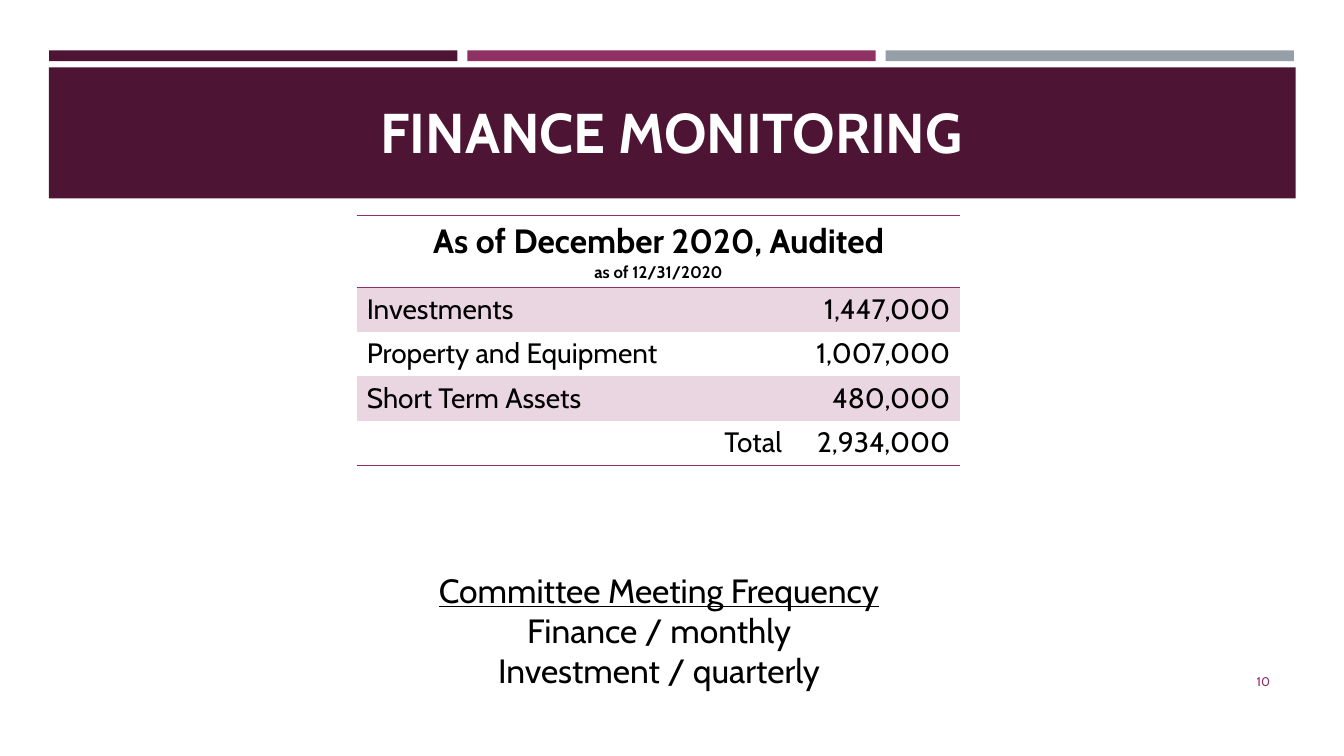
from dataclasses import dataclass

from lxml import etree
from pptx import Presentation
from pptx.dml.color import RGBColor
from pptx.enum.shapes import MSO_SHAPE
from pptx.enum.text import MSO_ANCHOR, PP_ALIGN
from pptx.oxml.ns import qn
from pptx.util import Cm, Pt

RECT = MSO_SHAPE.RECTANGLE
MIDDLE = MSO_ANCHOR.MIDDLE
LEFT, CENTER, RIGHT = PP_ALIGN.LEFT, PP_ALIGN.CENTER, PP_ALIGN.RIGHT
PLAIN_TABLE = "{2D5ABB26-0587-4C30-8999-92F81FD0307C}"


@dataclass(frozen=True)
class Theme:
    font: str = "Cabin"
    plum: str = "4D1434"
    magenta: str = "903163"
    gray: str = "969FA7"
    band: str = "E9D6E0"
    white: str = "FFFFFF"
    black: str = "000000"
    title: int = 40
    heading: int = 24
    body: int = 20
    note: int = 12
    number: int = 9


theme = Theme()


def style(p, size, color=theme.black, align=LEFT, bold=False):
    p.alignment = align
    for r in p.runs:
        r.font.name = theme.font
        r.font.size = Pt(size)
        r.font.bold = bold
        r.font.color.rgb = RGBColor.from_string(color)


def add_border(cell, side):
    ln = etree.Element(qn(f"a:{side}"), w=str(Pt(1)))
    fill = etree.SubElement(ln, qn("a:solidFill"))
    etree.SubElement(fill, qn("a:srgbClr"), val=theme.magenta)
    tcPr = cell._tc.get_or_add_tcPr()
    tcPr.insert(len(tcPr.findall(qn("a:lnT"))), ln)


prs = Presentation()
prs.slide_width, prs.slide_height = Cm(33.87), Cm(19.05)
s = prs.slides.add_slide(prs.slide_layouts[6])

blocks = [(1.24 + 10.54 * i, 1.27, 10.29, 0.27, color)
          for i, color in enumerate([theme.plum, theme.magenta, theme.gray])]
blocks.append((1.23, 1.7, 31.42, 3.3, theme.plum))
for x, y, w, h, color in blocks:
    sp = s.shapes.add_shape(RECT, Cm(x), Cm(y), Cm(w), Cm(h))
    sp.shadow.inherit = False
    sp.fill.solid()
    sp.fill.fore_color.rgb = RGBColor.from_string(color)
    sp.line.fill.background()

meetings = "Committee Meeting Frequency\nFinance / monthly\nInvestment / quarterly"
texts = [
    ("FINANCE MONITORING", 1.47, 1.57, 30.91, 3.48, theme.title, theme.white, CENTER, True),
    (meetings, 1.14, 14.2, 30.94, 3.35, theme.heading, theme.black, CENTER, False),
    ("10", 29.34, 16.66, 2.92, 1.02, theme.number, theme.magenta, RIGHT, False),
]
for text, x, y, w, h, size, color, align, bold in texts:
    tf = s.shapes.add_textbox(Cm(x), Cm(y), Cm(w), Cm(h)).text_frame
    tf.word_wrap = True
    tf.vertical_anchor = MIDDLE
    tf.text = text
    for p in tf.paragraphs:
        style(p, size, color, align, bold)
    if text == meetings:
        tf.paragraphs[0].runs[0].font.underline = True

rows = [
    ("Investments", "1,447,000"),
    ("Property and Equipment", "1,007,000"),
    ("Short Term Assets", "480,000"),
    ("Total", "2,934,000"),
]
table = s.shapes.add_table(len(rows) + 1, 2, Cm(8.99), Cm(5.44), Cm(15.21), Cm(6.28)).table
table._tbl.tblPr.find(qn("a:tableStyleId")).text = PLAIN_TABLE
table.first_row = table.horz_banding = False
table.columns[0].width, table.columns[1].width = Cm(10.97), Cm(4.24)
table.rows[0].height = Cm(1.8)

header = table.cell(0, 0)
header.merge(table.cell(0, 1))
header.text = "As of December 2020, Audited\vas of 12/31/2020"
header.vertical_anchor = MIDDLE
p = header.text_frame.paragraphs[0]
style(p, theme.heading, align=CENTER, bold=True)
p.runs[1].font.size = Pt(theme.note)

for i, values in enumerate(rows, 1):
    table.rows[i].height = Cm(1.12)
    for j, value in enumerate(values):
        cell = table.cell(i, j)
        cell.text = value
        align = RIGHT if j == 1 or value == "Total" else LEFT
        style(cell.text_frame.paragraphs[0], theme.body, align=align)
        if i % 2:
            cell.fill.solid()
            cell.fill.fore_color.rgb = RGBColor.from_string(theme.band)
        else:
            cell.fill.background()

for j in range(2):
    table.cell(0, j).fill.background()
    for i, side in [(0, "lnT"), (0, "lnB"), (len(rows), "lnB")]:
        add_border(table.cell(i, j), side)

prs.save("out.pptx")
